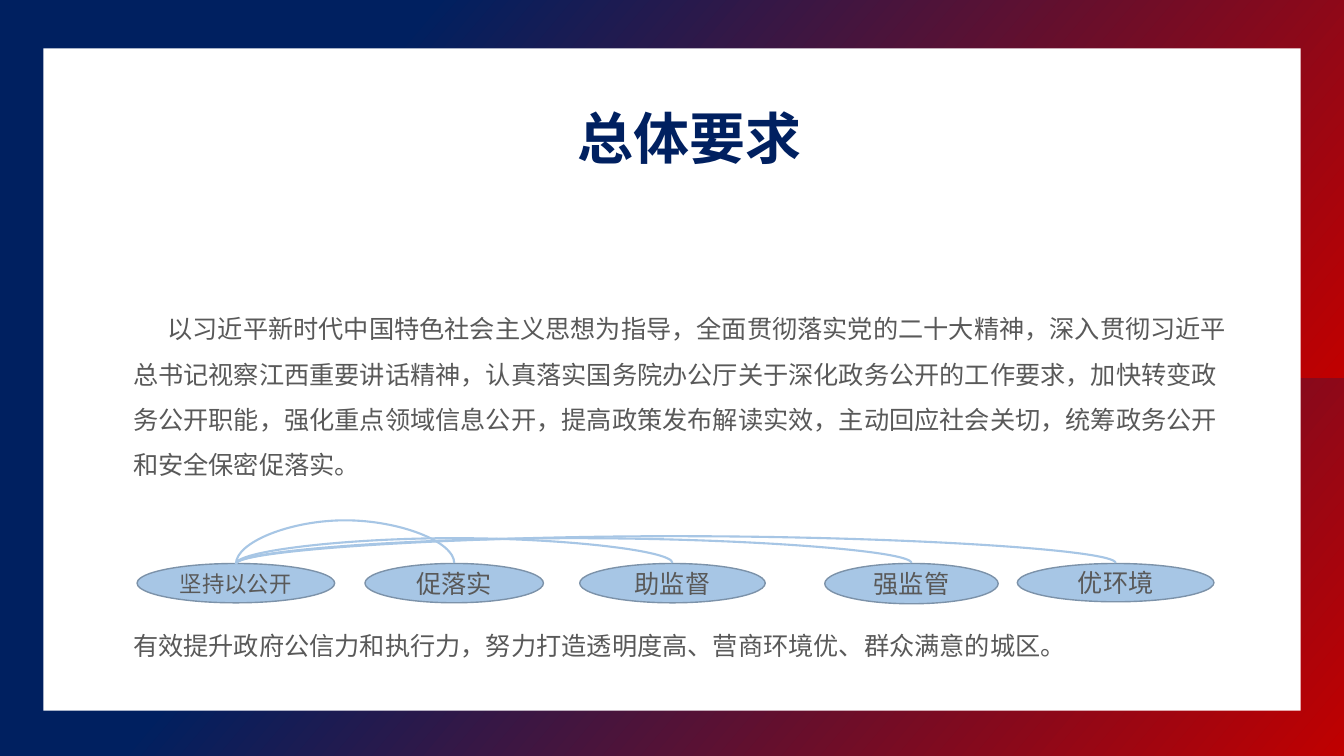
from dataclasses import dataclass

from lxml.etree import SubElement as Sub
from pptx import Presentation
from pptx.dml.color import RGBColor as RGB
from pptx.enum.shapes import MSO_CONNECTOR as Link, MSO_SHAPE as Form
from pptx.enum.text import MSO_ANCHOR as Anchor, MSO_AUTO_SIZE as Fit, PP_ALIGN as Align
from pptx.oxml.ns import qn
from pptx.util import Inches, Pt

FONT = "DejaVu Sans"
HUES = {"navy": "002060", "red": "C00000", "white": "FFFFFF",
        "text": "595959", "sky": "A7C6E5", "edge": "7C92A9"}
TOP = 5.59  # shared top of the ovals
THIN = 0.01  # depth of a link's box, which its rise is measured against


@dataclass
class Oval:
    text: str
    left: float
    width: float
    height: float = 0.39
    size: int = 18
    rise: float = 0  # height of the link from the first oval

    @property
    def mid(self) -> float:
        return self.left + self.width / 2


OVALS = [
    Oval("坚持以公开", 1.36, 1.96, size=16),
    Oval("促落实", 3.62, 1.77, rise=0.44),
    Oval("助监督", 5.75, 1.84, rise=0.26),
    Oval("强监管", 8.18, 1.72, 0.4, rise=0.26),
    Oval("优环境", 10.09, 1.95, 0.38, rise=0.28),
]
GOAL = ("以习近平新时代中国特色社会主义思想为指导，全面贯彻落实党的二十大精神，"
        "深入贯彻习近平总书记视察江西重要讲话精神，认真落实国务院办公厅关于深化政务公开的工作要求，"
        "加快转变政务公开职能，强化重点领域信息公开，提高政策发布解读实效，主动回应社会关切，"
        "统筹政务公开和安全保密促落实。")
RESULT = "有效提升政府公信力和执行力，努力打造透明度高、营商环境优、群众满意的城区。"


def hue(name: str) -> RGB:
    return RGB.from_string(HUES[name])


def write(para, text: str, size: int, tone: str = "text", bold: bool = False) -> None:
    run = para.add_run()
    run.text = text
    font = run.font
    font.name, font.size, font.bold = FONT, Pt(size), bold
    font.color.rgb = hue(tone)


def place(shape, left: float, top: float, width: float, height: float):
    shape.left, shape.top = Inches(left), Inches(top)
    shape.width, shape.height = Inches(width), Inches(height)
    frame = shape.text_frame
    frame.word_wrap = True
    frame.auto_size = Fit.NONE
    frame.vertical_anchor = Anchor.TOP
    return frame


def add_form(slide, form, left: float, top: float, width: float, height: float):
    shape = slide.shapes.add_shape(
        form, Inches(left), Inches(top), Inches(width), Inches(height))
    shape.shadow.inherit = False
    return shape


def add_panel(slide, depth: int, left: float, top: float, width: float, height: float):
    panel = add_form(slide, Form.RECTANGLE, left, top, width, height)
    panel.line.fill.background()
    slide.shapes._spTree.insert(2 + depth, panel._element)  # behind the text
    return panel


def add_oval(slide, oval: Oval) -> None:
    shape = add_form(slide, Form.OVAL, oval.left, TOP, oval.width, oval.height)
    shape.fill.solid()
    shape.fill.fore_color.rgb = hue("sky")
    shape.line.color.rgb = hue("edge")
    shape.line.width = Pt(1)
    frame = shape.text_frame
    frame.vertical_anchor = Anchor.MIDDLE
    para = frame.paragraphs[0]
    para.alignment = Align.CENTER
    write(para, oval.text, oval.size)


def add_link(slide, start: Oval, end: Oval) -> None:
    """Draw an arch: an upright curve turned by 270 degrees."""
    span = end.mid - start.mid
    left, top = (start.mid + end.mid - THIN) / 2, TOP - span / 2
    link = slide.shapes.add_connector(
        Link.CURVE, Inches(left), Inches(top), Inches(left + THIN), Inches(top + span))
    link.line.color.rgb = hue("sky")
    link.line.width = Pt(1.5)
    props = link._element.spPr
    props.find(qn("a:xfrm")).set("rot", str(270 * 60000))
    guides = props.find(qn("a:prstGeom")).find(qn("a:avLst"))
    Sub(guides, qn("a:gd"), name="adj1", fmla=f"val {round(end.rise / THIN * 100000)}")
    Sub(props, qn("a:effectLst"))


def main() -> None:
    deck = Presentation()
    deck.slide_width, deck.slide_height = Inches(13.33), Inches(7.5)
    slide = deck.slides.add_slide(deck.slide_layouts[1])

    # Backdrop: two gradient bands under a white sheet
    for row in range(2):
        band = add_panel(slide, row, 0, 3.76 * row, 13.33, 3.76)
        band.fill.gradient()
        band.fill.gradient_angle = 320
        for stop, name, spot in zip(band.fill.gradient_stops, ("navy", "red"), (0.26, 1)):
            stop.color.rgb = hue(name)
            stop.position = spot
    sheet = add_panel(slide, 2, 0.43, 0.48, 12.47, 6.57)
    sheet.fill.solid()
    sheet.fill.fore_color.rgb = hue("white")

    # Title
    title = place(slide.shapes.title, 2.92, 0.98, 7.84, 0.77).paragraphs[0]
    title.alignment = Align.CENTER
    write(title, "总体要求", 40, "navy", True)

    # Body: the second paragraph leaves room for the ovals
    body = place(slide.placeholders[1], 1.22, 2.91, 11.11, 3.73)
    for text, indent, gap in ((GOAL, 0.34, 0), (RESULT, 0, 97)):
        para = body.paragraphs[0] if text == GOAL else body.add_paragraph()
        para.line_spacing = 1.5
        para.space_before = Pt(gap)
        props = para._p.get_or_add_pPr()
        props.set("marL", "0")
        props.set("indent", str(Inches(indent)))
        Sub(props, qn("a:buNone"))
        write(para, text, 18)

    # Ovals and the links from the first one
    for oval in OVALS:
        add_oval(slide, oval)
    for oval in OVALS[1:]:
        add_link(slide, OVALS[0], oval)

    deck.save("out.pptx")


if __name__ == "__main__":
    main()
